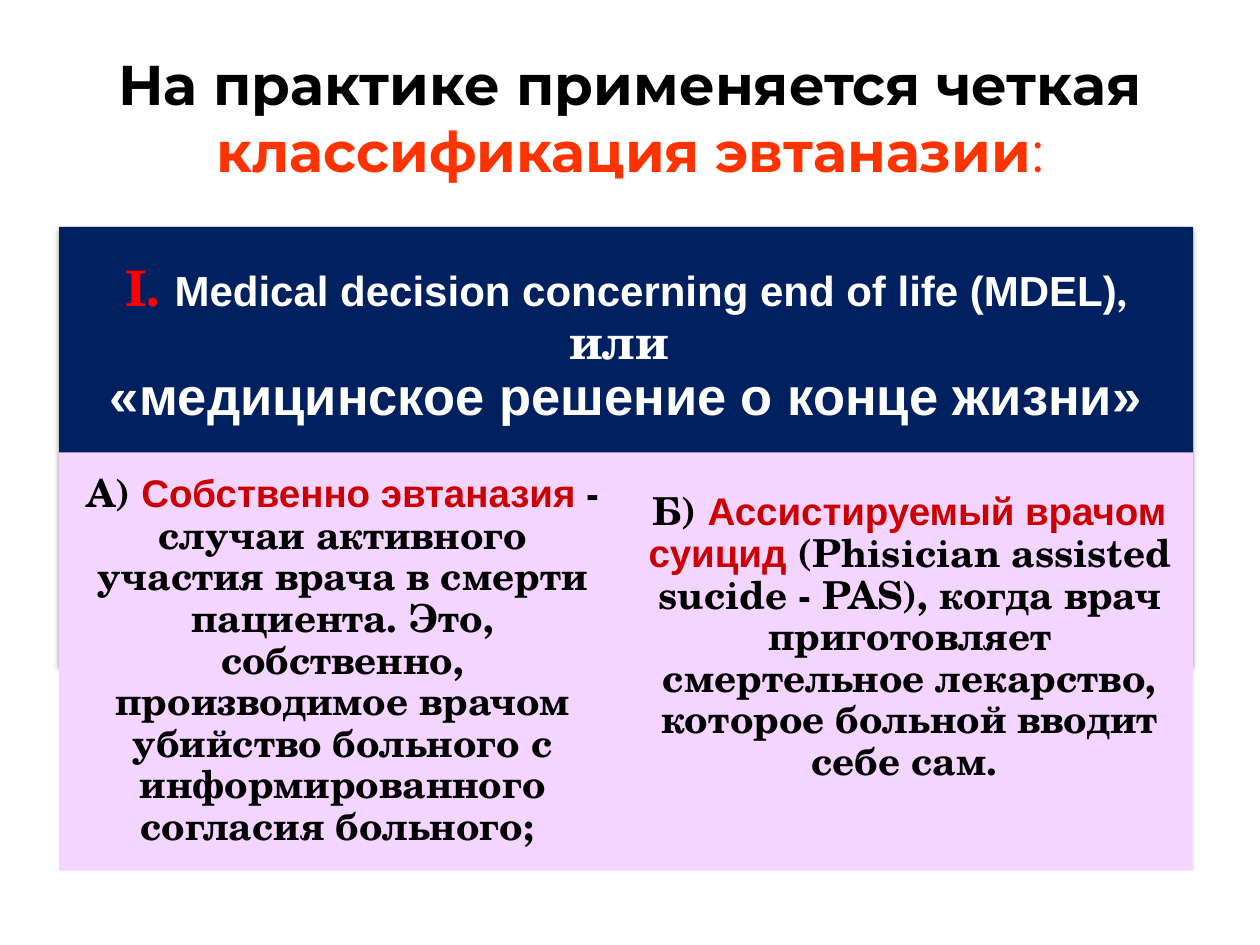
"""Build a slide on the classification of euthanasia."""
import pptx
import pptx.dml.color
import pptx.enum.shapes
import pptx.enum.text
import pptx.oxml
import pptx.oxml.ns
import pptx.util
from pptx.util import Inches

BLACK = pptx.dml.color.RGBColor(0x00, 0x00, 0x00)
WHITE = pptx.dml.color.RGBColor(0xFF, 0xFF, 0xFF)
ORANGE = pptx.dml.color.RGBColor(0xFF, 0x33, 0x00)
RED = pptx.dml.color.RGBColor(0xFF, 0x00, 0x00)
CRIMSON = pptx.dml.color.RGBColor(0xCC, 0x00, 0x00)
NAVY = pptx.dml.color.RGBColor(0x00, 0x20, 0x60)
LILAC = pptx.dml.color.RGBColor(0xF4, 0xD5, 0xFF)
SERIF, SANS, DISPLAY = "TeX Gyre Schola", "Arial", "Montserrat"


def add_span(para, text, size, font, color, bold=True):
    span = para.add_run()
    span.text = text
    span.font.size = pptx.util.Pt(size)
    span.font.name = font
    span.font.bold = bold
    span.font.color.rgb = color


def add_panel(left, top, width, height, color, insets):
    panel = slide.shapes.add_shape(
        pptx.enum.shapes.MSO_SHAPE.RECTANGLE,
        Inches(left), Inches(top), Inches(width), Inches(height))
    panel.shadow.inherit = False
    panel.fill.solid()
    panel.fill.fore_color.rgb = color
    panel.line.fill.background()
    frame = panel.text_frame
    frame.word_wrap = True
    frame.vertical_anchor = pptx.enum.text.MSO_ANCHOR.MIDDLE
    side, upper, lower = insets
    frame.margin_left = frame.margin_right = Inches(side)
    frame.margin_top, frame.margin_bottom = Inches(upper), Inches(lower)
    return panel


deck = pptx.Presentation()
deck.slide_width, deck.slide_height = Inches(10), Inches(7.5)
slide = deck.slides.add_slide(deck.slide_layouts[5])

title = slide.shapes.title
title.left, title.top = Inches(0.5), Inches(0.3)
title.width, title.height = Inches(9), Inches(1.25)
title.text_frame.vertical_anchor = pptx.enum.text.MSO_ANCHOR.MIDDLE
para = title.text_frame.paragraphs[0]
para.alignment = pptx.enum.text.PP_ALIGN.CENTER
add_span(para, "На практике применяется четкая ", 32, DISPLAY, BLACK)
add_span(para, "классификация эвтаназии", 32, DISPLAY, ORANGE)
add_span(para, ":", 32, DISPLAY, ORANGE, bold=False)

header = add_panel(0.47, 1.8, 9, 3.49, NAVY, (0.22, 0.22, 1.83))
namespace = pptx.oxml.ns.nsdecls("a")
effects = header._element.spPr.find(pptx.oxml.ns.qn("a:effectLst"))
effects.append(pptx.oxml.parse_xml(
    f'<a:outerShdw {namespace} blurRad="{pptx.util.Pt(3.1)}" dist="{pptx.util.Pt(1.8)}" '
    'dir="5400000" rotWithShape="0"><a:srgbClr val="000000">'
    '<a:alpha val="35000"/></a:srgbClr></a:outerShdw>'))

header_lines = [
    (0, [("I. ", 28, SERIF, RED),
         ("Medical decision concerning end of life (MDEL)", 24, SANS, WHITE),
         (", ", 20, SERIF, WHITE),
         ("или ", 28, SERIF, WHITE)]),
    (10.5, [("«медицинское решение о конце жизни»", 30, SANS, WHITE)]),
]
kinds = [
    ("А) ", "Собственно эвтаназия ",
     "- случаи активного участия врача в смерти пациента. Это, собственно, "
     "производимое врачом убийство больного с информированного согласия больного; ", 0.03),
    ("Б) ", "Ассистируемый врачом суицид ",
     "(Phisician assisted sucide - PAS), когда врач приготовляет смертельное "
     "лекарство, которое больной вводит себе сам. ", 0.4),
]

panels = [(header, header_lines)]
for column, (letter, term, meaning, lower) in enumerate(kinds):
    panel = add_panel(0.47 + 4.5 * column, 3.59, 4.5, 3.32, LILAC, (0.17, 0.03, lower))
    panels.append((panel, [(7.7, [(letter, 22, SERIF, BLACK),
                                  (term, 22, SANS, CRIMSON),
                                  (meaning, 22, SERIF, BLACK)])]))

for panel, lines in panels:
    frame = panel.text_frame
    for index, (gap, spans) in enumerate(lines):
        para = frame.add_paragraph() if index else frame.paragraphs[0]
        para.alignment = pptx.enum.text.PP_ALIGN.CENTER
        para.line_spacing = 0.9
        para.space_after = pptx.util.Pt(gap)
        for span in spans:
            add_span(para, *span)

deck.save("out.pptx")
